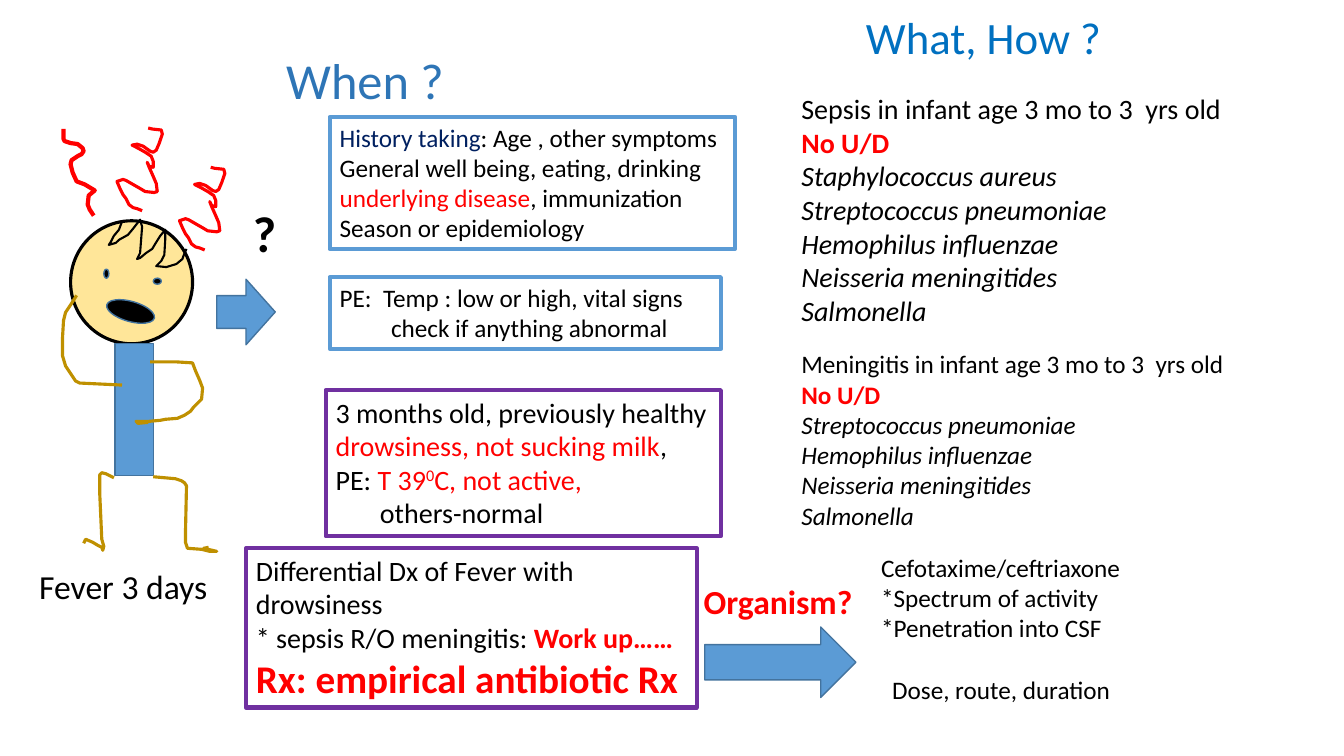
"""Build a slide on the work-up of a feverish child on a grid of 1333 columns by 750 rows."""
from dataclasses import dataclass
from typing import Optional

from pptx import Presentation
from pptx.dml.color import RGBColor
from pptx.enum.shapes import MSO_SHAPE
from pptx.enum.text import MSO_AUTO_SIZE
from pptx.util import Inches, Pt

CELL = Inches(0.01)
COLUMNS, ROWS = 1333, 750
FONT = "Calibri"
BLACK, RED, BLUE, EDGE = "000000", "FF0000", "5B9BD5", "43739E"
PURPLE, SKIN, LIMB = "7030A0", "FFE699", "BF9000"

Point = tuple[int, int]


@dataclass(frozen=True)
class Span:
    text: str
    color: str = BLACK
    bold: bool = False
    italic: bool = False
    size: Optional[int] = None
    raised: bool = False


@dataclass(frozen=True)
class Line:
    spans: tuple[Span, ...]
    indent: int = 0


@dataclass(frozen=True)
class Panel:
    area: tuple[int, int, int, int]
    size: int
    lines: tuple[Line, ...]
    border: Optional[str] = None
    wrap: bool = False


@dataclass(frozen=True)
class Figure:
    kind: MSO_SHAPE
    area: tuple[int, int, int, int]
    fill: str = BLACK
    edge: str = EDGE
    weight: float = 1
    turn: float = 0


@dataclass(frozen=True)
class Stroke:
    points: tuple[Point, ...]
    color: str
    weight: float = 2.25
    offset: Point = (0, 0)


def line(*spans: Span, indent: int = 0) -> Line:
    return Line(spans, indent)


def plain(text: str, indent: int = 0) -> Line:
    return line(Span(text), indent=indent)


def infection(title: str, *organisms: str) -> tuple[Line, ...]:
    return (plain(title), line(Span("No U/D", RED, bold=True)),
            *(line(Span(name, italic=True)) for name in organisms))


COMMON = ("Streptococcus pneumoniae", "Hemophilus influenzae", "Neisseria meningitides", "Salmonella")

FIGURES = (
    Figure(MSO_SHAPE.OVAL, (70, 219, 121, 122), SKIN, BLACK, 2.25),
    Figure(MSO_SHAPE.RECTANGLE, (114, 341, 38, 131), BLUE),
    Figure(MSO_SHAPE.OVAL, (103, 267, 5, 9)),
    Figure(MSO_SHAPE.OVAL, (152, 276, 8, 6)),
    Figure(MSO_SHAPE.OVAL, (105, 299, 49, 20), turn=15.8),
    Figure(MSO_SHAPE.RIGHT_ARROW, (215, 277, 58, 65), BLUE),
    Figure(MSO_SHAPE.RIGHT_ARROW, (699, 622, 150, 70), BLUE),
)

RIGHT_LEG = ((152, 473), (174, 475), (180, 477), (183, 479), (185, 482), (184, 529), (184, 538),
             (186, 544), (200, 545), (208, 547), (215, 547), (202, 544), (207, 543))
LEFT_LEG = ((113, 474), (105, 470), (101, 469), (99, 471), (99, 490), (100, 512), (101, 535),
            (103, 542), (102, 546), (101, 543), (97, 541), (92, 538), (85, 535), (83, 539))
RIGHT_ARM = ((149, 359), (175, 359), (191, 360), (194, 368), (198, 377), (201, 385), (200, 396),
             (197, 399), (192, 404), (189, 408), (183, 412), (176, 415), (164, 416), (159, 417),
             (148, 418), (135, 418), (137, 420), (147, 419))
LEFT_ARM = ((121, 382), (79, 380), (75, 378), (71, 372), (65, 363), (62, 353), (62, 335),
            (63, 318), (65, 310), (71, 301), (76, 293))
WAVE = ((93, 214), (89, 208), (87, 203), (88, 194), (94, 189), (89, 186), (84, 183), (76, 180),
        (72, 171), (70, 163), (71, 159), (77, 155), (81, 153), (83, 150), (82, 147), (77, 143),
        (70, 142), (64, 140), (63, 138), (63, 128))
ZIGZAG = ((141, 209), (136, 207), (132, 206), (128, 203), (125, 197), (122, 193), (119, 187),
          (116, 180), (122, 178), (125, 179), (132, 183), (139, 187), (144, 190), (153, 191),
          (156, 190), (155, 182), (152, 175), (148, 166), (146, 161), (148, 165), (152, 166),
          (152, 160), (150, 155), (144, 151), (137, 147), (131, 144), (136, 143), (142, 145),
          (149, 150), (152, 151), (155, 149), (158, 142), (161, 133), (160, 129), (151, 128),
          (147, 127))
HAIR = ((121, 220), (118, 228), (113, 234), (110, 240), (108, 243), (115, 241), (118, 238),
        (127, 233), (132, 227), (139, 218), (141, 225), (139, 251), (136, 257), (139, 256),
        (145, 251), (151, 247), (154, 242), (159, 234), (164, 228), (164, 237), (163, 253),
        (160, 259), (155, 264), (165, 265), (175, 262), (181, 257), (182, 254), (185, 247))

STROKES = (
    *(Stroke(limb, LIMB) for limb in (RIGHT_LEG, LEFT_LEG, RIGHT_ARM, LEFT_ARM)),
    Stroke(WAVE, RED, 3),
    Stroke(ZIGZAG, RED, offset=(62, 39)),
    Stroke(ZIGZAG, RED),
    Stroke(HAIR, BLACK, 1.5),
)

PANELS = (
    Panel((29, 556, 360, 81), 24, (plain("Fever 3 days"),), wrap=True),
    Panel((241, 196, 44, 71), 36, (line(Span("?", bold=True)),)),
    Panel((274, 44, 178, 71), 36, (line(Span("When ?", "2E75B6")),)),
    Panel((327, 116, 402, 131), 18, (
        line(Span("History taking", "002060"), Span(": Age , other symptoms")),
        plain("General well being, eating, drinking"),
        line(Span("underlying disease", RED), Span(", immunization")),
        plain("Season or epidemiology")), BLUE, True),
    Panel((327, 275, 388, 71), 18, (
        plain("PE:  Temp : low or high, vital signs"),
        plain("check if anything abnormal", indent=51)), BLUE, True),
    Panel((323, 387, 392, 145), 20, (
        plain("3 months old, previously healthy"),
        line(Span("drowsiness, not sucking milk", RED), Span(",")),
        line(Span("PE: "), Span("T 39", RED), Span("0", RED, raised=True), Span("C, not active,", RED)),
        plain("others-normal", indent=44)), PURPLE, True),
    Panel((244, 544, 447, 158), 20, (
        plain("Differential Dx of Fever with"),
        plain("drowsiness"),
        line(Span("* sepsis R/O meningitis: "), Span("Work up……", RED, bold=True)),
        line(Span("Rx: empirical antibiotic Rx", RED, bold=True, size=28))), PURPLE, True),
    Panel((849, 5, 256, 94), 32, (line(Span("What, How ?", "0070C0")),)),
    Panel((785, 86, 520, 246), 20, infection(
        "Sepsis in infant age 3 mo to 3  yrs old", "Staphylococcus aureus", *COMMON), wrap=True),
    Panel((785, 341, 450, 192), 18, infection("Meningitis in infant age 3 mo to 3  yrs old", *COMMON)),
    Panel((864, 543, 260, 131), 18, (
        plain("Cefotaxime/ceftriaxone"), plain("*Spectrum of activity"), plain("*Penetration into CSF"))),
    Panel((875, 664, 239, 40), 18, (plain("Dose, route, duration"),)),
    Panel((688, 571, 169, 50), 24, (line(Span("Organism?", RED, bold=True)),)),
)


def paint(target, color: str) -> None:
    target.rgb = RGBColor.from_string(color)


def outline(shape, color: str, weight: float) -> None:
    paint(shape.line.color, color)
    shape.line.width = Pt(weight)


def draw_figure(page, figure: Figure) -> None:
    shape = page.shapes.add_shape(figure.kind, *(CELL * value for value in figure.area))
    shape.shadow.inherit = False
    shape.rotation = figure.turn
    shape.fill.solid()
    paint(shape.fill.fore_color, figure.fill)
    outline(shape, figure.edge, figure.weight)


def draw_stroke(page, stroke: Stroke) -> None:
    right, down = stroke.offset
    first, *rest = [(column + right, row + down) for column, row in stroke.points]
    builder = page.shapes.build_freeform(*first, scale=CELL)
    builder.add_line_segments(rest, close=False)
    shape = builder.convert_to_shape()
    shape.shadow.inherit = False
    shape.fill.background()
    outline(shape, stroke.color, stroke.weight)


def draw_panel(page, panel: Panel) -> None:
    box = page.shapes.add_textbox(*(CELL * value for value in panel.area))
    if panel.border:
        outline(box, panel.border, 3)
    frame = box.text_frame
    frame.word_wrap = panel.wrap
    frame.auto_size = MSO_AUTO_SIZE.SHAPE_TO_FIT_TEXT
    for number, entry in enumerate(panel.lines):
        para = frame.add_paragraph() if number else frame.paragraphs[0]
        if entry.indent:
            para._p.get_or_add_pPr().set("marL", str(CELL * entry.indent))
        for span in entry.spans:
            add_span(para, span, panel.size)


def add_span(para, span: Span, size: int) -> None:
    run = para.add_run()
    run.text = span.text
    run.font.name = FONT
    run.font.size = Pt(span.size or size)
    run.font.bold = span.bold
    run.font.italic = span.italic
    paint(run.font.color, span.color)
    if span.raised:
        run._r.get_or_add_rPr().set("baseline", "30000")


def main() -> None:
    deck = Presentation()
    deck.slide_width, deck.slide_height = CELL * COLUMNS, CELL * ROWS
    page = deck.slides.add_slide(deck.slide_layouts[6])
    for figure in FIGURES:
        draw_figure(page, figure)
    for stroke in STROKES:
        draw_stroke(page, stroke)
    for panel in PANELS:
        draw_panel(page, panel)
    deck.save("out.pptx")


if __name__ == "__main__":
    main()
